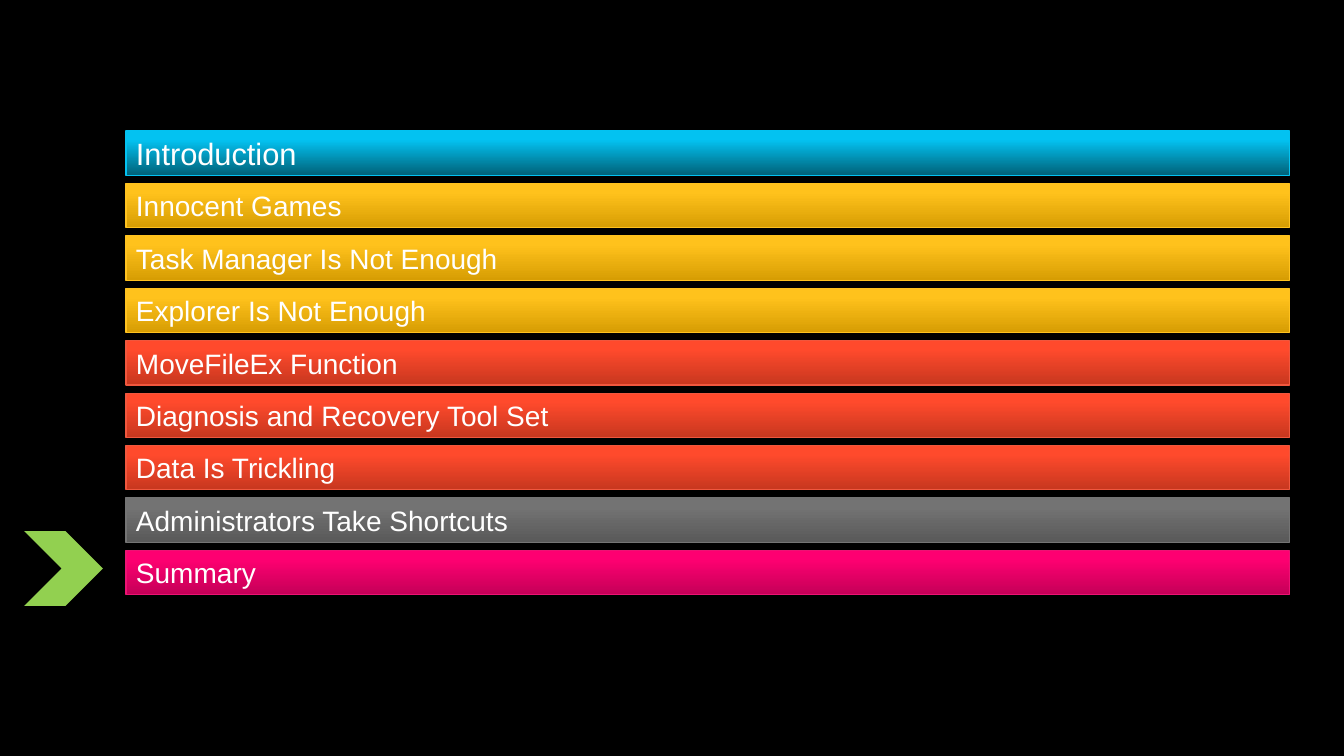
from copy import deepcopy

from pptx import Presentation
from pptx.dml.color import RGBColor
from pptx.enum.shapes import MSO_SHAPE
from pptx.enum.text import MSO_ANCHOR, PP_ALIGN
from pptx.util import Inches, Pt

AGENDA = [
    ("Introduction", "blue", 22),
    ("Innocent Games", "yellow", 20),
    ("Task Manager Is Not Enough", "yellow", 20),
    ("Explorer Is Not Enough", "yellow", 20),
    ("MoveFileEx Function", "red", 20),
    ("Diagnosis and Recovery Tool Set", "red", 20),
    ("Data Is Trickling", "red", 20),
    ("Administrators Take Shortcuts", "gray", 20),
    ("Summary", "pink", 20),
]
COLORS = {"background": "000000", "text": "FFFFFF", "marker": "92D050"}
# Gradient from bottom to top, then the outline
BAR_COLORS = {
    "blue": ("016178", "03C2F1", "03C2F1", "03C2F1"),
    "yellow": ("D79D03", "FFC21C", "FFC21D", "FFC21F"),
    "red": ("C7371F", "FF4A2C", "FF4B2E", "F0573E"),
    "gray": ("595959", "737373", "747474", "747474"),
    "pink": ("C40057", "FE0071", "FF0071", "ED1374"),
}
STOP_POSITIONS = (0, 0.8, 1)
BAR_LEFT, BAR_TOP, BAR_WIDTH, BAR_HEIGHT = 1.25, 1.3, 11.54, 0.44
BAR_PITCH = 0.52


def rgb(value):
    return RGBColor.from_string(value)


def fill_upwards(fill, colors):
    """Fill with a three-stop gradient that runs from bottom to top."""
    fill.gradient()
    fill.gradient_angle = 90
    stop_list = fill._fill._gradFill.gsLst
    stop_list.append(deepcopy(stop_list[-1]))
    for stop, position, color in zip(fill.gradient_stops, STOP_POSITIONS, colors):
        stop.position = position
        stop.color.rgb = rgb(color)


def add_bar(page, row, title, color_name, size):
    bar = page.shapes.add_shape(
        MSO_SHAPE.RECTANGLE, Inches(BAR_LEFT), Inches(BAR_TOP + row * BAR_PITCH),
        Inches(BAR_WIDTH), Inches(BAR_HEIGHT))
    bar.shadow.inherit = False
    *gradient, outline = BAR_COLORS[color_name]
    fill_upwards(bar.fill, gradient)
    bar.line.color.rgb = rgb(outline)
    bar.line.width = Pt(0.75)

    frame = bar.text_frame
    frame.word_wrap = True
    frame.vertical_anchor = MSO_ANCHOR.MIDDLE
    para = frame.paragraphs[0]
    para.text = title
    para.alignment = PP_ALIGN.LEFT
    para.font.name = "Arial"
    para.font.size = Pt(size)
    para.font.color.rgb = rgb(COLORS["text"])


def add_marker(page):
    marker = page.shapes.add_shape(
        MSO_SHAPE.CHEVRON, Inches(0.24), Inches(5.27), Inches(0.78), Inches(0.74))
    marker.shadow.inherit = False
    marker.fill.solid()
    marker.fill.fore_color.rgb = rgb(COLORS["marker"])
    marker.line.fill.background()


def main():
    deck = Presentation()
    deck.slide_width, deck.slide_height = Inches(13.33), Inches(7.5)
    page = deck.slides.add_slide(deck.slide_layouts[6])
    page.background.fill.solid()
    page.background.fill.fore_color.rgb = rgb(COLORS["background"])
    for row, (title, color_name, size) in enumerate(AGENDA):
        add_bar(page, row, title, color_name, size)
    add_marker(page)
    deck.save("out.pptx")


if __name__ == "__main__":
    main()
